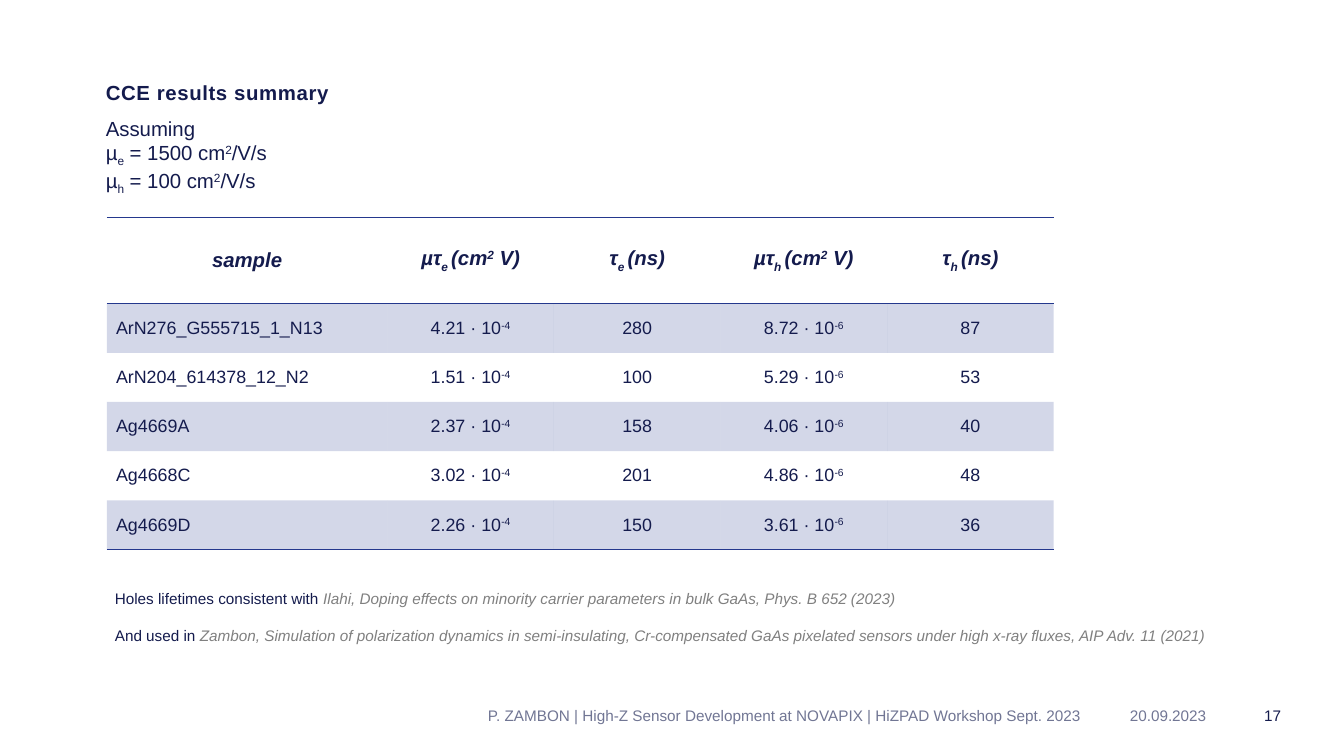
from lxml.etree import SubElement
from pptx import Presentation
from pptx.dml.color import RGBColor
from pptx.enum.text import MSO_ANCHOR, MSO_AUTO_SIZE, PP_ALIGN
from pptx.oxml.ns import qn
from pptx.util import Pt

NAVY, BLUE, GREY, SLATE = "141B4D", "24388D", "808080", "717694"
NO_STYLE = "{2D5ABB26-0587-4C30-8999-92F81FD0307C}"
LEFT, RIGHT, CENTER = PP_ALIGN.LEFT, PP_ALIGN.RIGHT, PP_ALIGN.CENTER

ASSUMPTIONS = ["Assuming", "µ~e~ = 1500 cm^2^/V/s", "µ~h~ = 100 cm^2^/V/s"]
HEADER = ["sample", "µτ~e ~(cm^2^ V)", "τ~e ~(ns)", "µτ~h ~(cm^2^ V)", "τ~h ~(ns)"]
SAMPLES = [
    ["ArN276_G555715_1_N13", "4.21 · 10^-4^", "280", "8.72 · 10^-6^", "87"],
    ["ArN204_614378_12_N2", "1.51 · 10^-4^", "100", "5.29 · 10^-6^", "53"],
    ["Ag4669A", "2.37 · 10^-4^", "158", "4.06 · 10^-6^", "40"],
    ["Ag4668C", "3.02 · 10^-4^", "201", "4.86 · 10^-6^", "48"],
    ["Ag4669D", "2.26 · 10^-4^", "150", "3.61 · 10^-6^", "36"],
]
REFERENCES = [
    ("Holes lifetimes consistent with",
     " Ilahi, Doping effects on minority carrier parameters in bulk GaAs, Phys. B 652 (2023)"),
    ("And used in",
     " Zambon, Simulation of polarization dynamics in semi-insulating, Cr-compensated GaAs "
     "pixelated sensors under high x-ray fluxes, AIP Adv. 11 (2021)"),
]
FOOTERS = [
    (983.5, 29.5, "17", NAVY, CENTER),
    (329, 526.3, "P. ZAMBON | High-Z Sensor Development at NOVAPIX | HiZPAD Workshop Sept. 2023",
     SLATE, RIGHT),
    (862.5, 107.5, "20.09.2023", SLATE, CENTER),
]


def rgb(color):
    return RGBColor.from_string(color)


def add_run(p, text, size, color=NAVY, bold=False, italic=False):
    r = p.add_run()
    r.text = text
    font = r.font
    font.name, font.size, font.bold, font.italic = "Arial", Pt(size), bold, italic
    font.color.rgb = rgb(color)
    return r


def add_rich_text(p, text, size, **style):
    """Write text in which ^x^ is raised and ~x~ is lowered."""
    for i, chunk in enumerate(text.split("^")):
        for j, piece in enumerate(chunk.split("~")):
            if piece:
                r = add_run(p, piece, size, **style)
                if i % 2 or j % 2:
                    r.font._element.set("baseline", "30000" if i % 2 else "-25000")


def paragraphs(tf, count):
    return [tf.paragraphs[0]] + [tf.add_paragraph() for _ in range(count - 1)]


def place(s, left, top, width, height):
    s.left, s.top, s.width, s.height = Pt(left), Pt(top), Pt(width), Pt(height)


def fill_placeholder(s, box, lines, bold=False):
    place(s, *box)
    tf = s.text_frame
    tf.margin_left = tf.margin_right = tf.margin_top = tf.margin_bottom = 0
    tf.vertical_anchor, tf.auto_size = MSO_ANCHOR.TOP, MSO_AUTO_SIZE.NONE
    for p, line in zip(paragraphs(tf, len(lines)), lines):
        pPr = p._p.get_or_add_pPr()
        pPr.set("marL", "0")
        pPr.set("indent", "0")
        SubElement(pPr, qn("a:buNone"))
        p.alignment, p.space_before = LEFT, Pt(0)
        add_rich_text(p, line, 16, bold=bold)


def add_text_box(slide, left, top, width, height):
    tf = slide.shapes.add_textbox(Pt(left), Pt(top), Pt(width), Pt(height)).text_frame
    tf.word_wrap = True
    return tf


def add_border(cell, side):
    ln = SubElement(cell._tc.get_or_add_tcPr(), qn(f"a:{side}"), w=str(Pt(1)))
    SubElement(SubElement(ln, qn("a:solidFill")), qn("a:srgbClr"), val=BLUE)


def tint(cell):
    cell.fill.solid()
    cell.fill.fore_color.rgb = rgb(BLUE)
    color = cell._tc.tcPr.find(qn("a:solidFill")).find(qn("a:srgbClr"))
    SubElement(color, qn("a:alpha"), val="20000")


def add_results_table(slide):
    rows = [HEADER] + SAMPLES
    frame = slide.shapes.add_table(len(rows), len(HEADER), Pt(83.8), Pt(170.6), Pt(743), Pt(261))
    table = frame.table
    table.first_row = table.horz_banding = False
    table._tbl.tblPr.find(qn("a:tableStyleId")).text = NO_STYLE
    for i, column in enumerate(table.columns):
        column.width = Pt(130.7 if i else 220)
    for i, row in enumerate(table.rows):
        row.height = Pt(38.6 if i else 67.6)
        for j, cell in enumerate(row.cells):
            cell.vertical_anchor = MSO_ANCHOR.MIDDLE
            p = cell.text_frame.paragraphs[0]
            p.alignment = LEFT if i and j == 0 else CENTER
            add_rich_text(p, rows[i][j], 14 if i else 16, bold=i == 0, italic=i == 0)
            if i == 0:
                add_border(cell, "lnT")
            if i in (0, len(SAMPLES)):
                add_border(cell, "lnB")
            if i % 2:
                tint(cell)


def add_references(slide):
    tf = add_text_box(slide, 83, 459, 887, 51)
    for i, (p, (lead, source)) in enumerate(zip(paragraphs(tf, len(REFERENCES)), REFERENCES)):
        p.space_before = Pt(14 if i else 0)
        add_run(p, lead, 12)
        add_run(p, source, 12, GREY, italic=True)


def add_footer(slide, left, width, text, color, align):
    p = add_text_box(slide, left, 550.8, width, 21.5).paragraphs[0]
    p.alignment = align
    add_run(p, text, 12, color)


def main():
    prs = Presentation()
    prs.slide_width, prs.slide_height = Pt(1054.2), Pt(593)
    slide = prs.slides.add_slide(prs.slide_layouts[1])
    title, body = slide.placeholders
    fill_placeholder(body, (83, 91, 887, 58.5), ASSUMPTIONS)
    fill_placeholder(title, (83, 62.6, 360, 19.5), ["CCE results summary"], bold=True)
    title.text_frame.paragraphs[0].runs[0].font._element.set("spc", "50")
    for footer in FOOTERS:
        add_footer(slide, *footer)
    add_results_table(slide)
    add_references(slide)
    prs.save("out.pptx")


if __name__ == "__main__":
    main()
